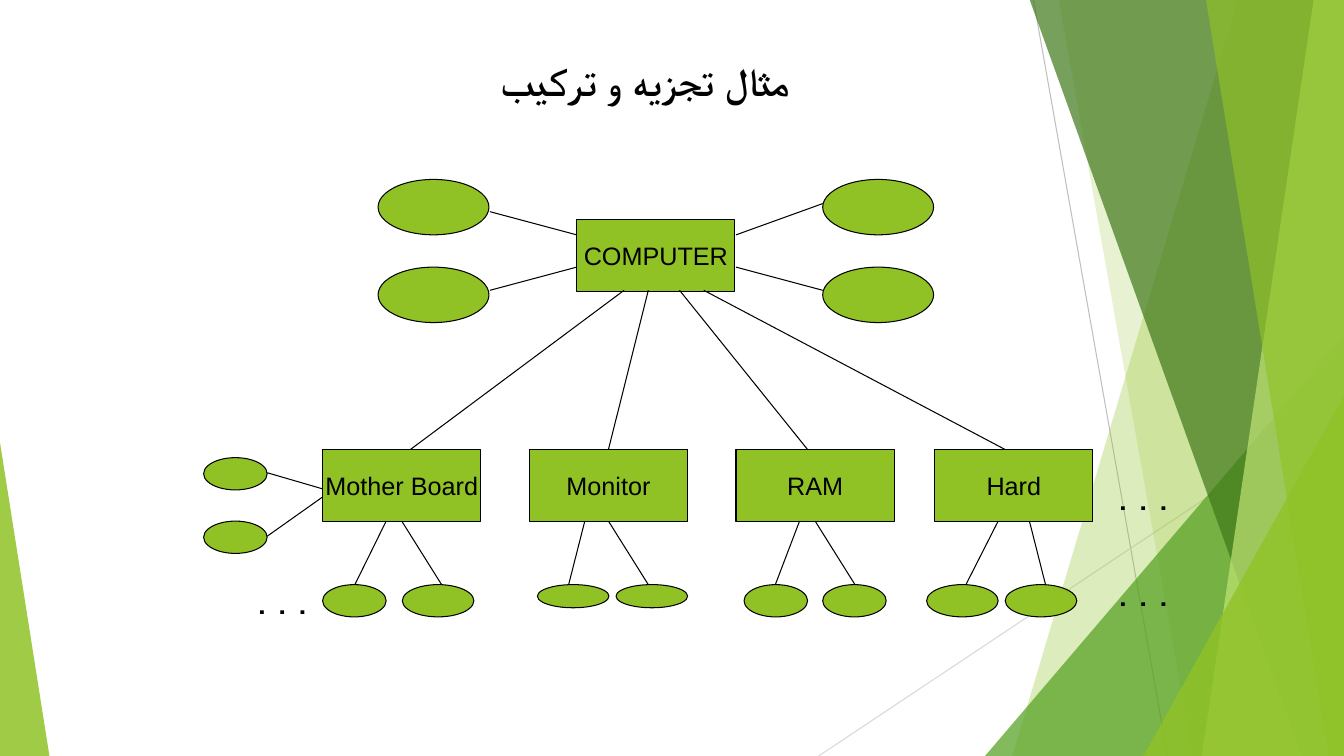
from lxml.etree import SubElement
from pptx import Presentation
from pptx.dml.color import RGBColor
from pptx.enum.shapes import MSO_CONNECTOR, MSO_SHAPE
from pptx.enum.text import MSO_ANCHOR, MSO_AUTO_SIZE, PP_ALIGN
from pptx.oxml.ns import qn
from pptx.util import Inches, Pt

BLACK = RGBColor(0x00, 0x00, 0x00)
LIME = RGBColor(0x90, 0xC2, 0x26)
GREEN = RGBColor(0x54, 0xA0, 0x21)
DARK_GREEN = RGBColor(0x3F, 0x78, 0x19)
PALE_LIME = RGBColor(0xC0, 0xE4, 0x74)
GRAY = RGBColor(0xBF, 0xBF, 0xBF)
LIGHT_GRAY = RGBColor(0xD9, 0xD9, 0xD9)

PAGE_WIDTH, PAGE_HEIGHT = 13.33, 7.5
BOX_WIDTH, BOX_HEIGHT = 1.57, 0.71
ROOT_LEFT, ROOT_TOP = 5.72, 2.18
PART_TOP, LEAF_TOP = 4.46, 5.8
ROOT_BOTTOM = 2.88
PART_BOTTOM = PART_TOP + BOX_HEIGHT

BANDS = [
    ((12.28, 13.33, 13.33, 10.04), LIME, 30),
    ((10.5, 13.33, 13.33, 11.83), LIME, 20),
    ((10.21, 13.33, 13.33, 12.91), DARK_GREEN, 70),
    ((13.03, 13.33, 13.33, 11.92), PALE_LIME, 70),
    ((11.96, 13.33, 13.33, 13.18), LIME, 65),
]

# Each part: name, left, link from the root, link to the part, and its leaves
# as (left, width, height, link start, link end).
PARTS = [
    ("Mother Board", 3.2, 6.19, 4.07,
     [(3.2, 0.63, 0.32, 3.83, 3.52), (3.99, 0.71, 0.32, 3.99, 4.38)]),
    ("Monitor", 5.25, 6.43, 6.04,
     [(5.33, 0.71, 0.23, 5.8, 5.64), (6.11, 0.71, 0.23, 6.04, 6.43)]),
    ("RAM", 7.3, 6.74, 8.01,
     [(7.38, 0.63, 0.32, 7.93, 7.69), (8.16, 0.63, 0.32, 8.08, 8.48)]),
    ("Hard", 9.27, 6.98, 9.97,
     [(9.19, 0.71, 0.32, 9.9, 9.58), (9.97, 0.71, 0.32, 10.21, 10.37)]),
]


def paint_glass(shape, color, opacity):
    shape.shadow.inherit = False
    shape.fill.solid()
    shape.fill.fore_color.rgb = color
    shape.line.fill.background()
    color_node = shape.fill._xPr.find(qn("a:solidFill"))[0]
    SubElement(color_node, qn("a:alpha"), val=str(opacity * 1000))


def add_band(page, corners, color, opacity):
    points = [(Inches(x), Inches(y))
              for x, y in zip(corners, (-0.01, -0.01, PAGE_HEIGHT, PAGE_HEIGHT))]
    builder = page.shapes.build_freeform(*points[0], scale=1.0)
    builder.add_line_segments(points[1:], close=True)
    paint_glass(builder.convert_to_shape(), color, opacity)


def add_triangle(page, left, top, right, apex, color, opacity):
    triangle = page.shapes.add_shape(
        MSO_SHAPE.ISOSCELES_TRIANGLE, Inches(left), Inches(top),
        Inches(right - left), Inches(PAGE_HEIGHT - top))
    triangle.adjustments[0] = apex
    paint_glass(triangle, color, opacity)


def add_link(page, start, end, color=BLACK):
    link = page.shapes.add_connector(
        MSO_CONNECTOR.STRAIGHT, *map(Inches, (*start, *end)))
    link.line.color.rgb = color
    link.line.width = Pt(0.75)
    SubElement(link._element.spPr, qn("a:effectLst"))
    return link


def add_node(page, kind, left, top, width, height):
    node = page.shapes.add_shape(kind, *map(Inches, (left, top, width, height)))
    node.shadow.inherit = False
    node.fill.solid()
    node.fill.fore_color.rgb = LIME
    node.line.color.rgb = BLACK
    node.line.width = Pt(0.75)
    return node


def add_oval(page, left, top, width, height):
    add_node(page, MSO_SHAPE.OVAL, left, top, width, height)


def write_text(frame, text, size, align, bold=False):
    para = frame.paragraphs[0]
    para.text = text
    para.alignment = align
    para.font.name = "Arial"
    para.font.size = Pt(size)
    para.font.bold = bold
    para.font.color.rgb = BLACK
    para._p.get_or_add_pPr().set("rtl", "1")


def add_box(page, text, left, top):
    box = add_node(page, MSO_SHAPE.RECTANGLE, left, top, BOX_WIDTH, BOX_HEIGHT)
    box.text_frame.word_wrap = False
    box.text_frame.vertical_anchor = MSO_ANCHOR.MIDDLE
    write_text(box.text_frame, text, 18, PP_ALIGN.CENTER)
    return box


def add_label(page, text, left, top, width, height, size):
    label = page.shapes.add_textbox(*map(Inches, (left, top, width, height)))
    label.text_frame.word_wrap = True
    label.text_frame.auto_size = MSO_AUTO_SIZE.SHAPE_TO_FIT_TEXT
    write_text(label.text_frame, text, size, PP_ALIGN.RIGHT, bold=True)


def add_backdrop(page):
    add_link(page, (10.25, 0), (11.58, PAGE_HEIGHT), GRAY)
    add_link(page, (PAGE_WIDTH, 4.03), (8.12, PAGE_HEIGHT), LIGHT_GRAY)
    for band in BANDS[:2]:
        add_band(page, *band)
    add_triangle(page, 9.77, 3.33, PAGE_WIDTH, 1, GREEN, 72)
    for band in BANDS[2:]:
        add_band(page, *band)
    add_triangle(page, 11.34, 3.93, PAGE_WIDTH, 1, LIME, 80)
    add_triangle(page, 0, 4.39, 0.49, 0, LIME, 85)


def add_root(page):
    for left in (3.75, 8.16):
        for top in (1.78, 2.65):
            add_oval(page, left, top, 1.1, 0.55)
    add_box(page, "COMPUTER", ROOT_LEFT, ROOT_TOP)
    for oval_x, oval_y, root_x, root_y in (
            (4.86, 2.1, 5.72, 2.33), (8.16, 2.02, 7.3, 2.33),
            (4.86, 2.88, 5.72, 2.65), (8.16, 2.88, 7.3, 2.65)):
        add_link(page, (oval_x, oval_y), (root_x, root_y))


def add_part(page, name, left, root_x, part_x, leaves):
    middle = left + BOX_WIDTH / 2
    box = add_box(page, name, left, PART_TOP)
    link = add_link(page, (root_x, ROOT_BOTTOM), (part_x, PART_TOP))
    if abs(part_x - middle) < 0.01:
        link.end_connect(box, 0)
    for leaf_left, width, height, start_x, end_x in leaves:
        add_oval(page, leaf_left, LEAF_TOP, width, height)
        link = add_link(page, (start_x, PART_BOTTOM), (end_x, LEAF_TOP))
        if abs(start_x - middle) < 0.01:
            link.begin_connect(box, 2)


def main():
    deck = Presentation()
    deck.slide_width = Inches(PAGE_WIDTH)
    deck.slide_height = Inches(PAGE_HEIGHT)
    page = deck.slides.add_slide(deck.slide_layouts[6])
    add_backdrop(page)
    add_root(page)
    for part in PARTS:
        add_part(page, *part)
    for oval_top, link_y, board_y in ((4.54, 4.69, 4.85), (5.17, 5.32, 4.93)):
        add_oval(page, 2.02, oval_top, 0.63, 0.32)
        add_link(page, (2.65, link_y), (3.2, board_y))
    for left, top in ((10.88, 5.72), (10.88, 4.77), (2.34, 5.8)):
        add_label(page, ".  .  .", left, top, 0.79, 0.4, 18)
    add_label(page, "مثال تجزيه و تركيب", 4.78, 0.52, 3.15, 0.57, 28)
    deck.save("out.pptx")


if __name__ == "__main__":
    main()
